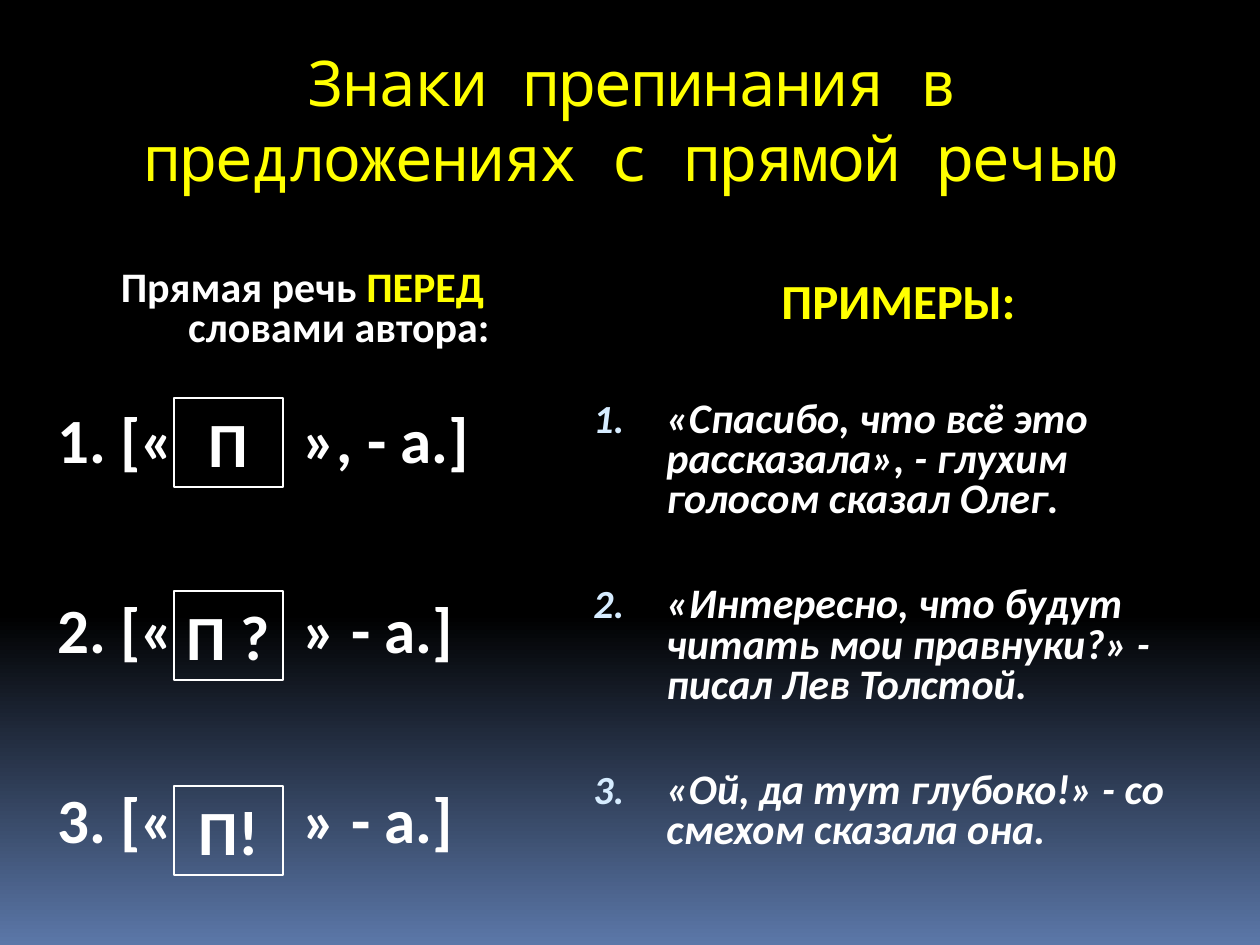
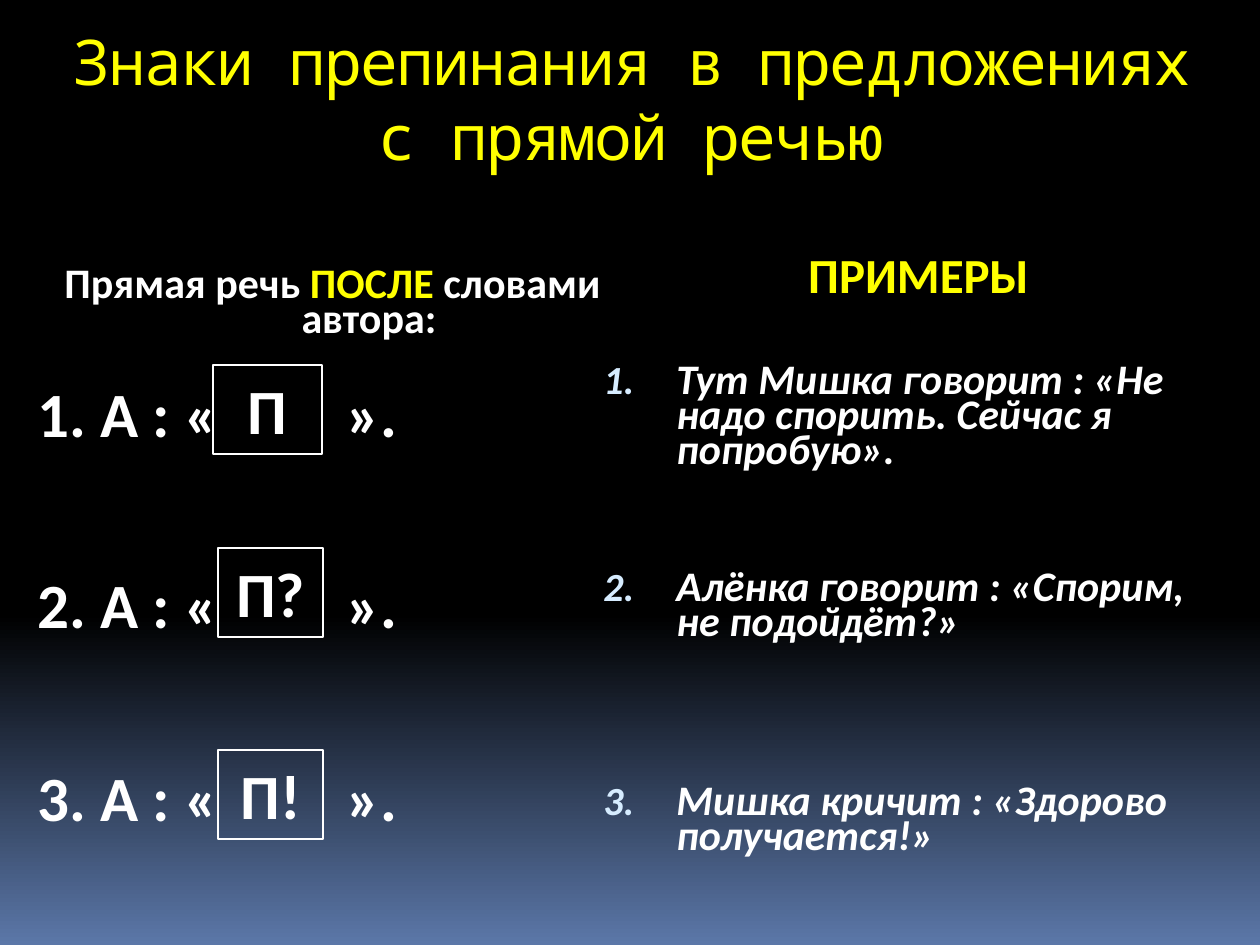
from copy import deepcopy
from dataclasses import dataclass
from typing import Any

from lxml import etree
from pptx import Presentation
from pptx import util as u
from pptx.dml.color import RGBColor
from pptx.enum import shapes, text
from pptx.oxml.ns import qn

PX = 914400 / 126
HANG = 73  # hanging indent of headings and numbered examples
SLOT_TRACKING = 6510  # widens the space behind a slot, hundredths of a point

COLOURS = {"night": "000000", "dusk": "5B77A8", "accent": "FFFF00",
           "plain": "FFFFFF", "number": "D6ECFF"}

# Character formats
TITLE = {"size": u.Pt(36), "name": "Noto Sans Mono"}
TOPIC = {"size": u.Pt(24), "name": "Calibri", "bold": True}
LABEL = {**TOPIC, "size": u.Pt(28)}
FORMULA = {**TOPIC, "size": u.Pt(36)}
EXAMPLE = {**TOPIC, "italic": True}

TITLE_TEXT = "Знаки препинания в предложениях с прямой речью"


@dataclass
class Area:
    left: int
    top: int
    width: int
    height: int

    def emu(self) -> list[u.Emu]:
        return [px(n) for n in (self.left, self.top, self.width, self.height)]


@dataclass
class Entry:
    words: str
    before: int  # space above, points


@dataclass
class Slot:
    words: str
    area: Area


@dataclass
class Lesson:
    title: Area
    rules: Area
    examples: Area
    spacing: float
    position: str  # highlighted word of the rules heading
    label: str
    formulas: list[Entry]
    sentences: list[Entry]
    slots: list[Slot]


LESSONS = [
    Lesson(
        Area(64, 37, 1134, 126), Area(45, 264, 515, 645), Area(581, 276, 635, 631),
        0.8, "ПЕРЕД ", "ПРИМЕРЫ:",
        [Entry("1. [« », - а.]", 37), Entry("2. [« » - а.]", 74),
         Entry("3. [« » - а.]", 74)],
        [Entry("«Спасибо, что всё это рассказала», - глухим голосом сказал Олег.", 41),
         Entry("«Интересно, что будут читать мои правнуки?» - писал Лев Толстой.", 37),
         Entry("«Ой, да тут глубоко!» - со смехом сказала она.", 37)],
        [Slot("П", Area(174, 398, 109, 89)), Slot("П ?", Area(174, 591, 109, 89)),
         Slot("П!", Area(174, 786, 109, 89))]),
    Lesson(
        Area(54, 16, 1155, 198), Area(25, 264, 615, 646), Area(591, 254, 655, 667),
        0.7, "ПОСЛЕ ", "ПРИМЕРЫ",
        [Entry("1. А : « ».", 31), Entry("2. А : « ».", 79),
         Entry("3. А : « ».", 80)],
        [Entry("Тут Мишка говорит : «Не надо спорить. Сейчас я попробую».", 37),
         Entry("Алёнка говорит : «Спорим, не подойдёт?»", 58),
         Entry("Мишка кричит : «Здорово получается!»", 82)],
        [Slot("П", Area(213, 365, 109, 89)), Slot("П?", Area(218, 548, 105, 89)),
         Slot("П!", Area(218, 750, 105, 89))]),
]


def px(count: int) -> u.Emu:
    return u.Emu(round(count * PX))


def colour(name: str) -> RGBColor:
    return RGBColor.from_string(COLOURS[name])


def add_span(para: Any, words: str, style: dict[str, Any], tint: str = "plain",
             tracking: int = 0) -> None:
    span = para.add_run()
    span.text = words
    for name, value in style.items():
        setattr(span.font, name, value)
    span.font.color.rgb = colour(tint)
    if tracking:
        span.font._element.set("spc", str(tracking))


def add_property(parent: Any, tag: str, **values: str) -> Any:
    return etree.SubElement(parent, qn(tag), values)


def add_text_box(page: Any, area: Area) -> Any:
    frame = page.shapes.add_textbox(*area.emu()).text_frame
    frame.word_wrap = True
    return frame


def format_para(para: Any, spacing: float, before: int = 7, hang: int = HANG,
                centred: bool = False) -> Any:
    para.line_spacing = spacing
    para.space_before = u.Pt(before)
    if centred:
        para.alignment = text.PP_ALIGN.CENTER
    properties = para._p.get_or_add_pPr()
    properties.set("marL", str(px(hang)))
    properties.set("indent", str(-px(hang)))
    return properties


def paint_background(page: Any) -> None:
    fill = page.background.fill
    fill.gradient()
    fill.gradient_angle = 270
    first = next(page.element.iter(qn("a:gs")))
    first.addnext(deepcopy(first))
    stops = zip(fill.gradient_stops, (0, 0.65, 1), ("night", "night", "dusk"))
    for stop, position, tint in stops:
        stop.position = position
        stop.color.rgb = colour(tint)


def add_title(page: Any, area: Area) -> None:
    para = add_text_box(page, area).paragraphs[0]
    para.alignment = text.PP_ALIGN.CENTER
    add_span(para, TITLE_TEXT, TITLE, "accent", tracking=-100)


def add_rules(page: Any, lesson: Lesson) -> None:
    frame = add_text_box(page, lesson.rules)
    heading = frame.paragraphs[0]
    format_para(heading, lesson.spacing, centred=True)
    add_span(heading, "Прямая речь ", TOPIC)
    add_span(heading, lesson.position, TOPIC, "accent")
    add_span(heading, "словами автора:", TOPIC)
    for formula in lesson.formulas:
        para = frame.add_paragraph()
        format_para(para, lesson.spacing, formula.before, hang=0)
        opening, closing = formula.words.split("« ")
        add_span(para, opening + "«", FORMULA)
        add_span(para, " ", FORMULA, tracking=SLOT_TRACKING)
        add_span(para, closing, FORMULA)


def add_examples(page: Any, lesson: Lesson) -> None:
    frame = add_text_box(page, lesson.examples)
    heading = frame.paragraphs[0]
    format_para(heading, lesson.spacing, centred=True)
    add_span(heading, lesson.label, LABEL, "accent")
    for sentence in lesson.sentences:
        para = frame.add_paragraph()
        properties = format_para(para, lesson.spacing, sentence.before)
        tint = add_property(properties, "a:buClr")
        add_property(tint, "a:srgbClr", val=COLOURS["number"])
        add_property(properties, "a:buSzPct", val="95000")
        add_property(properties, "a:buFont", typeface="Calibri")
        add_property(properties, "a:buAutoNum", type="arabicPeriod")
        add_span(para, sentence.words, EXAMPLE)


def add_slot(page: Any, slot: Slot) -> None:
    box = page.shapes.add_shape(shapes.MSO_SHAPE.RECTANGLE, *slot.area.emu())
    box.shadow.inherit = False
    box.fill.background()
    box.line.color.rgb = colour("plain")
    box.line.width = u.Pt(0.75)
    frame = box.text_frame
    frame.word_wrap = True
    frame.vertical_anchor = text.MSO_ANCHOR.MIDDLE
    frame.auto_size = text.MSO_AUTO_SIZE.SHAPE_TO_FIT_TEXT
    para = frame.paragraphs[0]
    para.alignment = text.PP_ALIGN.CENTER
    add_span(para, slot.words, FORMULA)


def main() -> None:
    deck = Presentation()
    deck.slide_width, deck.slide_height = px(1260), px(945)
    for lesson in LESSONS:
        page = deck.slides.add_slide(deck.slide_layouts[6])
        paint_background(page)
        add_title(page, lesson.title)
        add_rules(page, lesson)
        add_examples(page, lesson)
        for slot in lesson.slots:
            add_slot(page, slot)
    deck.save("out.pptx")


if __name__ == "__main__":
    main()
